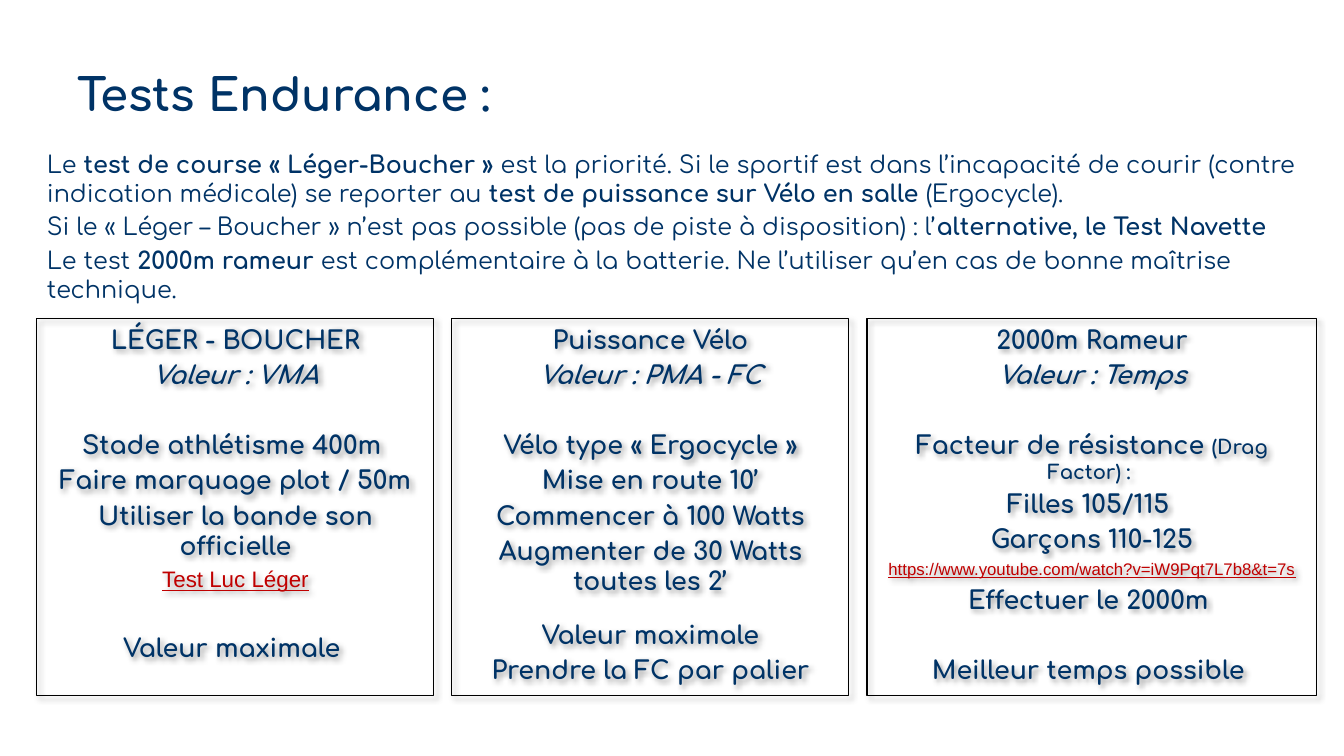
"""Build the endurance tests slide."""
from dataclasses import dataclass

from lxml.etree import SubElement
from pptx import Presentation
from pptx.dml.color import RGBColor
from pptx.enum.shapes import MSO_SHAPE
from pptx.enum.text import MSO_ANCHOR, PP_ALIGN
from pptx.oxml.ns import qn
from pptx.util import Emu, Pt


@dataclass(frozen=True)
class Theme:
    navy: str = "003366"
    red: str = "C00000"
    black: str = "000000"
    font: str = "Comfortaa"
    link_font: str = "Arial"
    title: int = 32
    intro: int = 17
    card: int = 18
    detail: int = 14
    link: int = 16
    small_link: int = 12
    gap: float = 3.6
    small_break: float = 16.8
    large_break: float = 28.6


@dataclass(frozen=True)
class Style:
    size: int
    bold: bool = True
    italic: bool = False
    underline: bool = False
    color: str = Theme.navy
    font: str = Theme.font


THEME = Theme()
TITLE = Style(THEME.title)
PLAIN = Style(THEME.intro, bold=False)
STRONG = Style(THEME.intro)
CARD = Style(THEME.card)
VALUE = Style(THEME.card, italic=True)
DETAIL = Style(THEME.detail)
LINK = Style(THEME.link, False, False, True, THEME.red, THEME.link_font)
SMALL_LINK = Style(THEME.small_link, False, False, True, THEME.red, THEME.link_font)

HEADING = [(THEME.gap, [("Tests Endurance :", TITLE)])]
INTRO = [
    (THEME.gap, [
        ("Le ", PLAIN),
        ("test de course « Léger-Boucher »", STRONG),
        (" est la priorité. Si le sportif est dans l’incapacité de courir "
         "(contre indication médicale) se reporter au ", PLAIN),
        ("test de puissance sur Vélo en salle ", STRONG),
        ("(Ergocycle).", PLAIN),
    ]),
    (THEME.gap, [
        ("Si le « Léger – Boucher » n’est pas possible "
         "(pas de piste à disposition) : l’", PLAIN),
        ("alternative, le Test Navette", STRONG),
    ]),
    (THEME.gap, [
        ("Le test ", PLAIN),
        ("2000m rameur ", STRONG),
        ("est complémentaire à la batterie. Ne l’utiliser qu’en cas de "
         "bonne maîtrise technique.", PLAIN),
    ]),
]
CARDS = [
    (397, [
        (THEME.gap, [("LÉGER - BOUCHER", CARD)]),
        (THEME.gap, [("Valeur : VMA", VALUE)]),
        (THEME.large_break, [("Stade athlétisme 400m ", CARD)]),
        (THEME.gap, [("Faire marquage plot / 50m", CARD)]),
        (THEME.gap, [("Utiliser la bande son officielle", CARD)]),
        (THEME.gap, [("Test Luc Léger", LINK)]),
        (THEME.large_break, [("Valeur maximale ", CARD)]),
    ]),
    (397, [
        (THEME.gap, [("Puissance Vélo", CARD)]),
        (THEME.gap, [("Valeur : PMA - FC", VALUE)]),
        (THEME.large_break, [("Vélo type « Ergocycle »", CARD)]),
        (THEME.gap, [("Mise en route 10’", CARD)]),
        (THEME.gap, [("Commencer à 100 Watts", CARD)]),
        (THEME.gap, [("Augmenter de 30 Watts toutes les 2’", CARD)]),
        (THEME.small_break, [("Valeur maximale", CARD)]),
        (THEME.gap, [("Prendre la FC par palier", CARD)]),
    ]),
    (450, [
        (THEME.gap, [("2000m Rameur", CARD)]),
        (THEME.gap, [("Valeur : Temps", VALUE)]),
        (THEME.large_break, [("Facteur de résistance ", CARD), ("(Drag Factor) : ", DETAIL)]),
        (THEME.gap, [("Filles 105/115 ", CARD)]),
        (THEME.gap, [("Garçons 110-125", CARD)]),
        (THEME.gap, [("https://www.youtube.com/watch?v=iW9Pqt7L7b8&t=7s", SMALL_LINK)]),
        (THEME.gap, [("Effectuer le 2000m ", CARD)]),
        (THEME.large_break, [("Meilleur temps possible ", CARD)]),
    ]),
]

SLIDE_SIZE = (1344, 756)
TITLE_BOX = (68, 58, 1210, 72)
INTRO_BOX = (37, 145, 1279, 174)
CARD_LEFT, CARD_TOP, CARD_HEIGHT, CARD_GAP = 37, 319, 377, 18


def px(length):
    return Emu(round(length * 914400 / 100.8))


def fill_text(shape, paragraphs, alignment=PP_ALIGN.LEFT, anchor=MSO_ANCHOR.TOP):
    frame = shape.text_frame
    frame.word_wrap = True
    frame.vertical_anchor = anchor
    for index, (space_before, runs) in enumerate(paragraphs):
        paragraph = frame.add_paragraph() if index else frame.paragraphs[0]
        paragraph.alignment = alignment
        paragraph.space_before = Pt(space_before if index else 0)
        for text, style in runs:
            run = paragraph.add_run()
            run.text = text
            run.font.name = style.font
            run.font.size = Pt(style.size)
            run.font.bold = style.bold
            run.font.italic = style.italic
            run.font.underline = style.underline
            run.font.color.rgb = RGBColor.from_string(style.color)


def add_text(slide, box, paragraphs, anchor=MSO_ANCHOR.TOP):
    shape = slide.shapes.add_textbox(*map(px, box))
    fill_text(shape, paragraphs, anchor=anchor)


def add_shadow(shape):
    shape.shadow.inherit = False
    effects = shape._element.spPr.find(qn("a:effectLst"))
    shadow = SubElement(effects, qn("a:outerShdw"), blurRad=str(Pt(4)),
                        dist=str(Pt(3)), dir="2700000", algn="tl", rotWithShape="0")
    color = SubElement(shadow, qn("a:srgbClr"), val=THEME.black)
    SubElement(color, qn("a:alpha"), val="40000")


def add_card(slide, box, paragraphs):
    shape = slide.shapes.add_shape(MSO_SHAPE.RECTANGLE, *map(px, box))
    shape.fill.background()
    shape.line.color.rgb = RGBColor.from_string(THEME.black)
    shape.line.width = Pt(0.75)
    add_shadow(shape)
    fill_text(shape, paragraphs, PP_ALIGN.CENTER)


def main():
    presentation = Presentation()
    presentation.slide_width, presentation.slide_height = map(px, SLIDE_SIZE)
    slide = presentation.slides.add_slide(presentation.slide_layouts[6])
    add_text(slide, TITLE_BOX, HEADING, MSO_ANCHOR.MIDDLE)
    add_text(slide, INTRO_BOX, INTRO)
    left = CARD_LEFT
    for width, paragraphs in CARDS:
        add_card(slide, (left, CARD_TOP, width, CARD_HEIGHT), paragraphs)
        left += width + CARD_GAP
    presentation.save("out.pptx")


if __name__ == "__main__":
    main()
